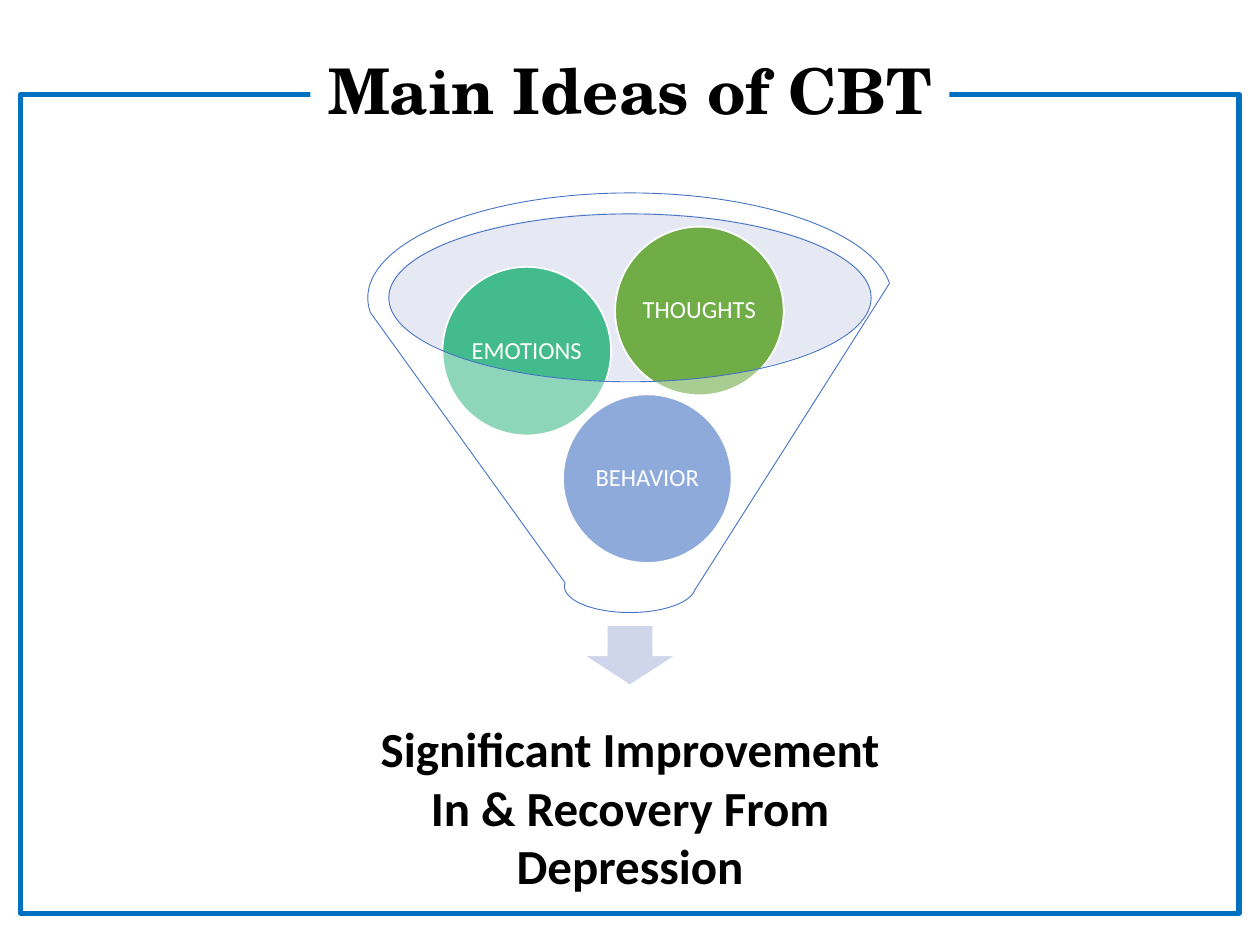
"""Build a slide with a funnel that shows the main ideas of CBT."""
import pptx
import pptx.dml.color
import pptx.enum.shapes
import pptx.enum.text
import pptx.oxml.ns
import pptx.util
from lxml import etree

TITLE = "Main Ideas of CBT"
OUTCOME = ["Significant Improvement", "In & Recovery From", "Depression"]
BALLS = [
    ("BEHAVIOR", 11.35, 7.95, "blue"),
    ("EMOTIONS", 8.92, 5.38, "teal"),
    ("THOUGHTS", 12.4, 4.57, "green"),
]
COLORS = {
    "frame": "0070C0", "white": "FFFFFF", "black": "000000", "rim": "C1C9E4",
    "arrow": "CFD5EA", "blue": "4472C4", "teal": "43BB8D", "green": "70AD47",
}
SLIDE_WIDTH, SLIDE_HEIGHT = 25.4, 19.05
BALL_SIZE = 3.4
SHAPES = pptx.enum.shapes.MSO_SHAPE


def color(name):
    return pptx.dml.color.RGBColor.from_string(COLORS[name])


def centered(top, width, height):
    return (SLIDE_WIDTH - width) / 2, top, width, height


def add_shape(slide, kind, box, fill=None, line=None, line_width=1, opacity=100):
    shape = slide.shapes.add_shape(kind, *map(pptx.util.Cm, box))
    shape.shadow.inherit = False
    if fill:
        shape.fill.solid()
        shape.fill.fore_color.rgb = color(fill)
    else:
        shape.fill.background()
    if opacity < 100:
        value = shape.fill._xPr.find(".//" + pptx.oxml.ns.qn("a:srgbClr"))
        etree.SubElement(value, pptx.oxml.ns.qn("a:alpha"), val=str(opacity * 1000))
    if line:
        shape.line.color.rgb = color(line)
        shape.line.width = pptx.util.Pt(line_width)
    else:
        shape.line.fill.background()
    return shape


def write_text(shape, lines, size, font="Calibri", ink="black", bold=False,
               spacing=1.0, margin=0.13, anchor="MIDDLE"):
    frame = shape.text_frame
    frame.word_wrap = False
    frame.vertical_anchor = pptx.enum.text.MSO_ANCHOR[anchor]
    frame.margin_left = frame.margin_right = pptx.util.Cm(margin)
    frame.margin_top = frame.margin_bottom = pptx.util.Cm(margin)
    frame.text = "\n".join(lines)
    for paragraph in frame.paragraphs:
        paragraph.alignment = pptx.enum.text.PP_ALIGN.CENTER
        paragraph.line_spacing = spacing
        paragraph.font.size = pptx.util.Pt(size)
        paragraph.font.name = font
        paragraph.font.bold = bold
        paragraph.font.color.rgb = color(ink)


def main():
    presentation = pptx.Presentation()
    presentation.slide_width = pptx.util.Cm(SLIDE_WIDTH)
    presentation.slide_height = pptx.util.Cm(SLIDE_HEIGHT)
    slide = presentation.slides.add_slide(presentation.slide_layouts[6])

    add_shape(slide, SHAPES.RECTANGLE, centered(1.9, 24.56, 16.51),
              line="frame", line_width=3)
    title = add_shape(slide, SHAPES.RECTANGLE, centered(1.27, 12.88, 1.27), "white")
    write_text(title, [TITLE], 36, font="TeX Gyre Schola", bold=True, spacing=0.9)

    add_shape(slide, SHAPES.OVAL, centered(4.29, 9.75, 3.38), "rim", opacity=40)
    add_shape(slide, SHAPES.DOWN_ARROW, centered(12.6, 1.88, 1.22), "arrow", "white")
    for label, left, top, fill in BALLS:
        ball = add_shape(slide, SHAPES.OVAL, (left, top, BALL_SIZE, BALL_SIZE),
                         fill, "white")
        write_text(ball, [label], 14, ink="white", spacing=0.9, margin=0.05)
    add_shape(slide, SHAPES.FUNNEL, centered(3.89, 10.57, 8.46), "white", "blue",
              line_width=0.5, opacity=40)

    outcome = slide.shapes.add_textbox(
        *map(pptx.util.Cm, centered(14.35, 10.69, 3.84)))
    write_text(outcome, OUTCOME, 28, bold=True, anchor="TOP")
    presentation.save("out.pptx")


if __name__ == "__main__":
    main()
